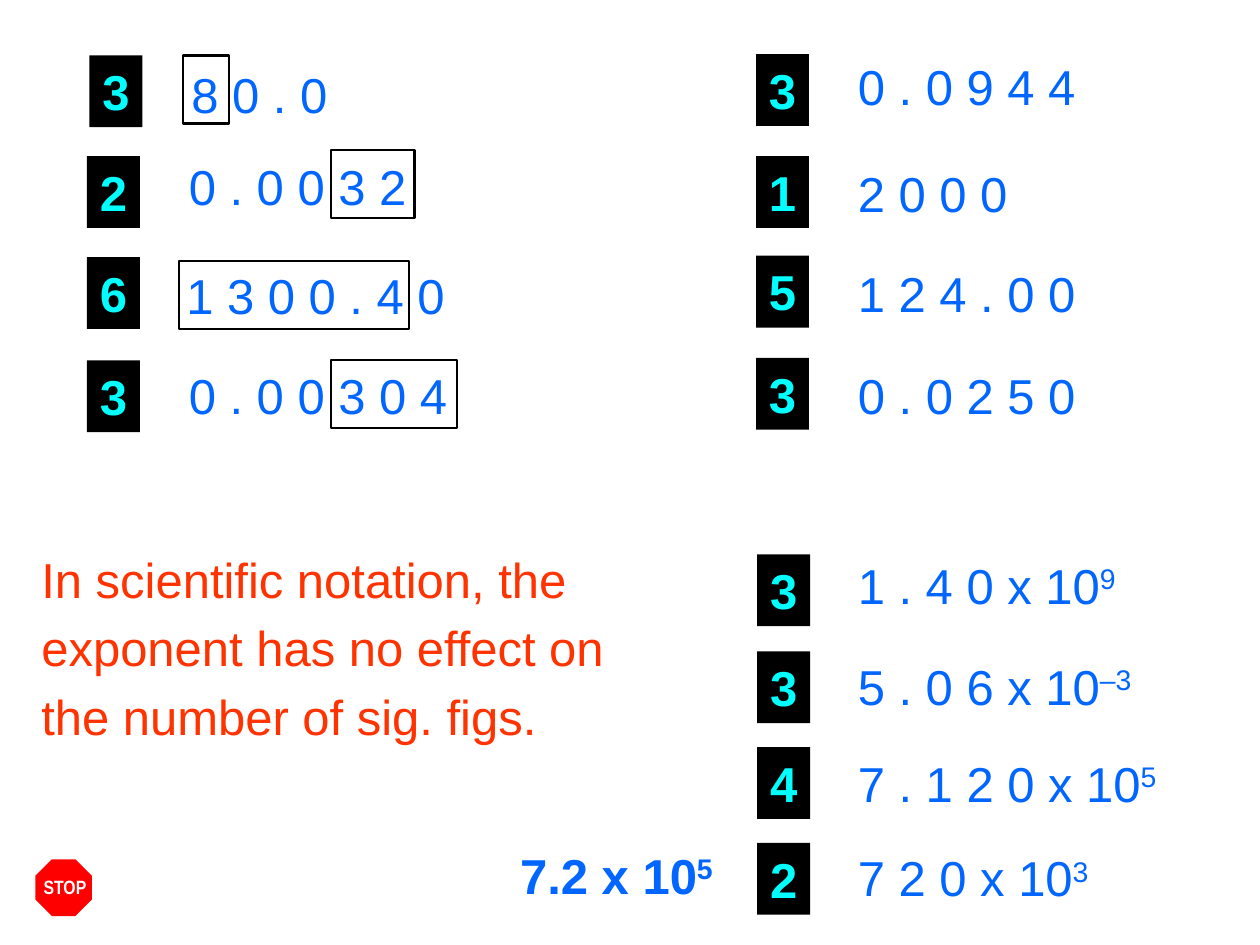
from lxml.etree import SubElement as Sub
from pptx import Presentation
from pptx.dml.color import RGBColor as Rgb
from pptx.enum.shapes import MSO_SHAPE as Shape
from pptx.enum.text import MSO_ANCHOR as Anchor, MSO_AUTO_SIZE as Fit, PP_ALIGN as Align
from pptx.oxml.ns import qn
from pptx.util import Inches, Pt

COLS, ROWS = 100, 75
BLUE, CYAN, ORANGE, BLACK = "0066FF", "00FFFF", "FF3300", "000000"


def tint(code):
    return Rgb.from_string(code)


class Board:
    """Holds the style and the slide, and draws on a grid of 100 by 75 cells."""

    def __init__(self, font="Arial", size=28):
        self.deck = Presentation()
        self.deck.slide_width, self.deck.slide_height = Inches(10), Inches(7.5)
        self.shapes = self.deck.slides.add_slide(self.deck.slide_layouts[6]).shapes
        self.font, self.size = font, size

    def span(self, x, y, w, h):
        wide, high = self.deck.slide_width / COLS, self.deck.slide_height / ROWS
        return int(x * wide), int(y * high), int(w * wide), int(h * high)

    def style(self, para, color, bold=False, size=None, name=None):
        font = para.font
        font.name, font.size = name or self.font, Pt(size or self.size)
        font.bold, font.color.rgb = bold, tint(color)

    def text(self, x, y, w, h, lines, color=BLUE, bold=False):
        frame = self.shapes.add_textbox(*self.span(x, y, w, h)).text_frame
        frame.word_wrap = True
        for i, line in enumerate(lines):
            para = frame.add_paragraph() if i else frame.paragraphs[0]
            gap = Sub(para._p.get_or_add_pPr(), qn("a:spcBef"))
            Sub(gap, qn("a:spcPct")).set("val", "20000")
            self.style(para, color, bold)
            base, _, power = line.partition("^")
            para.add_run().text = base
            if power:
                run = para.add_run()
                run.text = power
                run.font._element.set("baseline", "30000")

    def shape(self, kind, x, y, w, h, fill=None, line=None):
        item = self.shapes.add_shape(kind, *self.span(x, y, w, h))
        item.shadow.inherit = False
        if fill:
            item.fill.solid()
            item.fill.fore_color.rgb = tint(fill)
        else:
            item.fill.background()
        if line:
            item.line.color.rgb, item.line.width = tint(line), Pt(1.25)
        else:
            item.line.fill.background()
        return item

    def label(self, item, text, color, size=None, name=None):
        frame = item.text_frame
        frame.word_wrap, frame.auto_size = False, Fit.SHAPE_TO_FIT_TEXT
        frame.vertical_anchor = Anchor.TOP
        para = frame.paragraphs[0]
        para.text, para.alignment = text, Align.CENTER
        self.style(para, color, True, size, name)

    def badge(self, x, y, count):
        item = self.shape(Shape.RECTANGLE, x, y, 4.2, 5.7, BLACK)
        self.label(item, count, CYAN)

    def frame(self, x, y, w):
        self.shape(Shape.RECTANGLE, x, y, w, 5.4, line=BLACK)

    def stop(self, x, y):
        sign = self.shape(Shape.OCTAGON, x, y, 4.5, 4.5, "FF0000")
        word = self.shapes.add_textbox(*self.span(x - 0.4, y + 0.8, 5.5, 2.9))
        self.label(word, "STOP", "FFFFFF", 11, "Arial Narrow")
        self.shapes.add_group_shape([sign, word])


def main():
    board = Board()
    items = [
        (7.1, 4.4, "3", 14.2, 4.6, "8 0 . 0"),
        (6.9, 12.4, "2", 14, 11.9, "0 . 0 0 3 2"),
        (6.9, 20.4, "6", 13.8, 20.6, "1 3 0 0 . 4 0"),
        (6.9, 28.6, "3", 14, 28.5, "0 . 0 0 3 0 4"),
        (60, 4.3, "3", 67.1, 4, "0 . 0 9 4 4"),
        (60, 12.4, "1", 67.1, 12.5, "2 0 0 0"),
        (60, 20.3, "5", 67.1, 20.4, "1 2 4 . 0 0"),
        (60, 28.4, "3", 67.1, 28.5, "0 . 0 2 5 0"),
        (60.1, 44, "3", 67.1, 43.6, "1 . 4 0 x 10^9"),
        (60.1, 51.7, "3", 67.1, 51.6, "5 . 0 6 x 10^–3"),
        (60.1, 59.3, "4", 67.1, 59.3, "7 . 1 2 0 x 10^5"),
        (60.1, 66.9, "2", 67.1, 66.8, "7 2 0 x 10^3"),
    ]
    for left, top, count, x, y, number in items:
        board.badge(left, top, count)
        board.text(x, y, 28.3 if "^" in number else 25.8, 5.8, [number])
    for x, y, w in [(14.5, 4.4, 3.7), (26.3, 11.9, 6.6), (14.2, 20.7, 18.3), (26.3, 28.6, 10)]:
        board.frame(x, y, w)
    rule = ["In scientific notation, the", "exponent has no effect on", "the number of sig. figs."]
    board.text(2.3, 43.1, 53.5, 17.3, rule, ORANGE)
    board.text(40.3, 66.6, 21.7, 5.8, ["7.2 x 10^5"], bold=True)
    board.stop(2.8, 68.2)
    board.deck.save("out.pptx")


if __name__ == "__main__":
    main()
